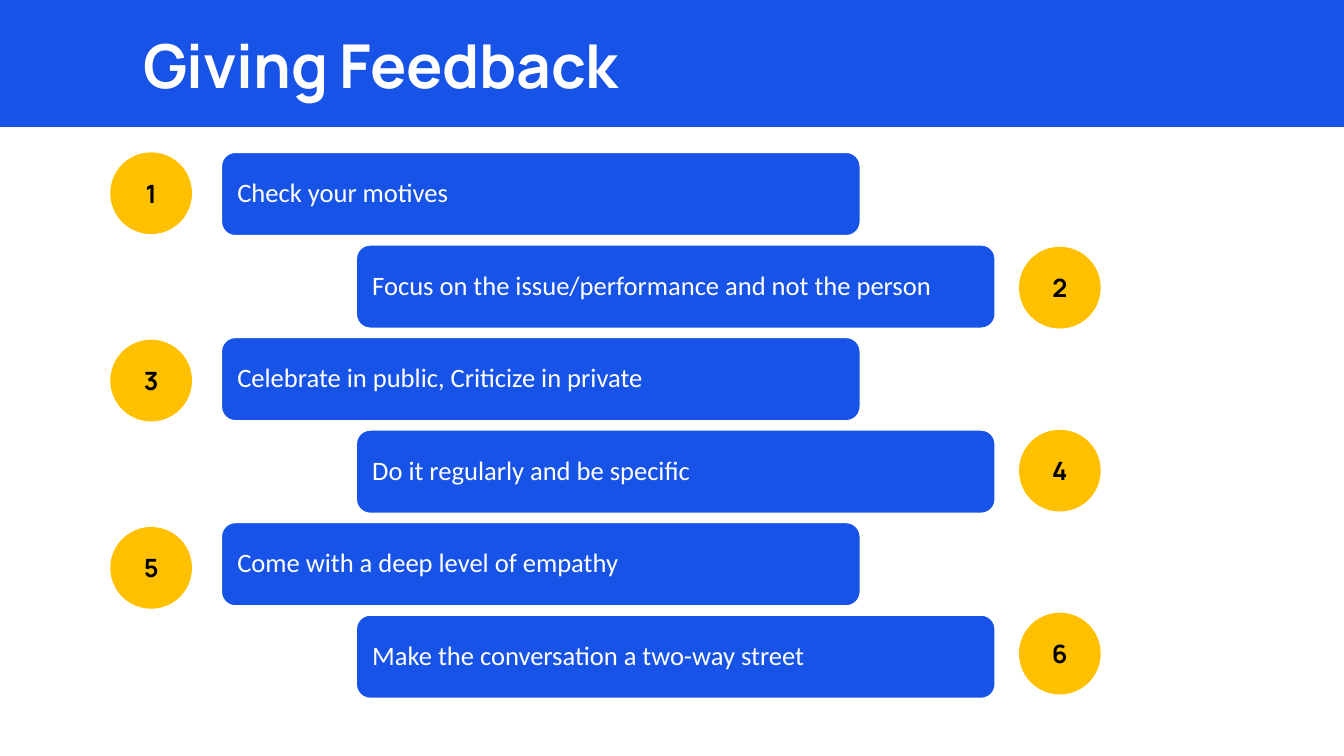
from pptx import Presentation
from pptx import util as u
from pptx.dml.color import RGBColor
from pptx.enum import shapes, text

BLUE = RGBColor(0x18, 0x53, 0xE7)
AMBER = RGBColor(0xFF, 0xC0, 0x00)
WHITE = RGBColor(0xFF, 0xFF, 0xFF)
BLACK = RGBColor(0x00, 0x00, 0x00)

SLIDE_WIDTH, SLIDE_HEIGHT = 33.87, 19.05
TITLE_ONLY = 5

TITLE_FONT = {"name": "Manrope", "size": u.Pt(43.2), "bold": True}
TIP_FONT = {"name": "Calibri", "size": u.Pt(19), "bold": False}
NUMBER_FONT = {"name": "Manrope", "size": u.Pt(18), "bold": True}

TIPS = [
    "Check your motives",
    "Focus on the issue/performance and not the person",
    "Celebrate in public, Criticize in private",
    "Do it regularly and be specific",
    "Come with a deep level of empathy",
    "Make the conversation a two-way street",
]


def write(shape, words, font, color, align):
    frame = shape.text_frame
    frame.text = words
    frame.word_wrap = True
    frame.auto_size = text.MSO_AUTO_SIZE.NONE
    frame.vertical_anchor = text.MSO_ANCHOR.MIDDLE
    paragraph = frame.paragraphs[0]
    paragraph.alignment = align
    run = paragraph.runs[0]
    for key, value in font.items():
        setattr(run.font, key, value)
    run.font.color.rgb = color


def add_filled(slide, kind, left, top, width, height, fill):
    """Add a flat, unoutlined preset shape; lengths are in centimetres."""
    shape = slide.shapes.add_shape(
        kind, u.Cm(left), u.Cm(top), u.Cm(width), u.Cm(height))
    shape.shadow.inherit = False
    shape.fill.solid()
    shape.fill.fore_color.rgb = fill
    shape.line.fill.background()
    return shape


def add_header(slide, left, top, width, height):
    band = add_filled(slide, shapes.MSO_SHAPE.RECTANGLE,
                      left, top, width, height, BLUE)
    title = slide.shapes.title
    title.element.addprevious(band.element)  # keeps the band behind the title
    title.left, title.top = u.Cm(left + 3.35), u.Cm(top + 0.53)
    title.width, title.height = u.Cm(27.89), u.Cm(2.16)
    write(title, "Giving Feedback", TITLE_FONT, WHITE, text.PP_ALIGN.LEFT)
    title.text_frame.paragraphs[0].runs[0].font._element.set("spc", "-20")


def add_tip_bars(slide, left, top, width, height):
    """Stack the tips evenly, shifting every second bar to the right edge."""
    bar_width, bar_height = 16.1, 2.1
    pitch = (height - bar_height) / (len(TIPS) - 1)
    for index, tip in enumerate(TIPS):
        indent = (width - bar_width) * (index % 2)
        bar = add_filled(slide, shapes.MSO_SHAPE.ROUNDED_RECTANGLE,
                         left + indent, top + index * pitch,
                         bar_width, bar_height, BLUE)
        bar.line.color.rgb = WHITE
        bar.line.width = u.Pt(1)
        for side in ("left", "top", "right", "bottom"):
            setattr(bar.text_frame, f"margin_{side}", u.Cm(0.3))
        write(bar, tip, TIP_FONT, WHITE, text.PP_ALIGN.LEFT)
        bar.text_frame.paragraphs[0].line_spacing = 0.9


def add_number_column(slide, left, top, size, pitch, first):
    for row, number in enumerate(range(first, len(TIPS) + 1, 2)):
        badge = add_filled(slide, shapes.MSO_SHAPE.OVAL,
                           left, top + row * pitch, size, size, AMBER)
        write(badge, str(number), NUMBER_FONT, BLACK, text.PP_ALIGN.CENTER)


def main():
    deck = Presentation()
    deck.slide_width, deck.slide_height = u.Cm(SLIDE_WIDTH), u.Cm(SLIDE_HEIGHT)
    slide = deck.slides.add_slide(deck.slide_layouts[TITLE_ONLY])
    add_header(slide, 0, 0, SLIDE_WIDTH, 3.2)
    add_tip_bars(slide, 5.58, 3.84, 19.5, 13.76)
    add_number_column(slide, 2.78, 3.84, 2.06, 4.72, first=1)
    add_number_column(slide, 25.68, 6.22, 2.06, 4.61, first=2)
    deck.save("out.pptx")


if __name__ == "__main__":
    main()
